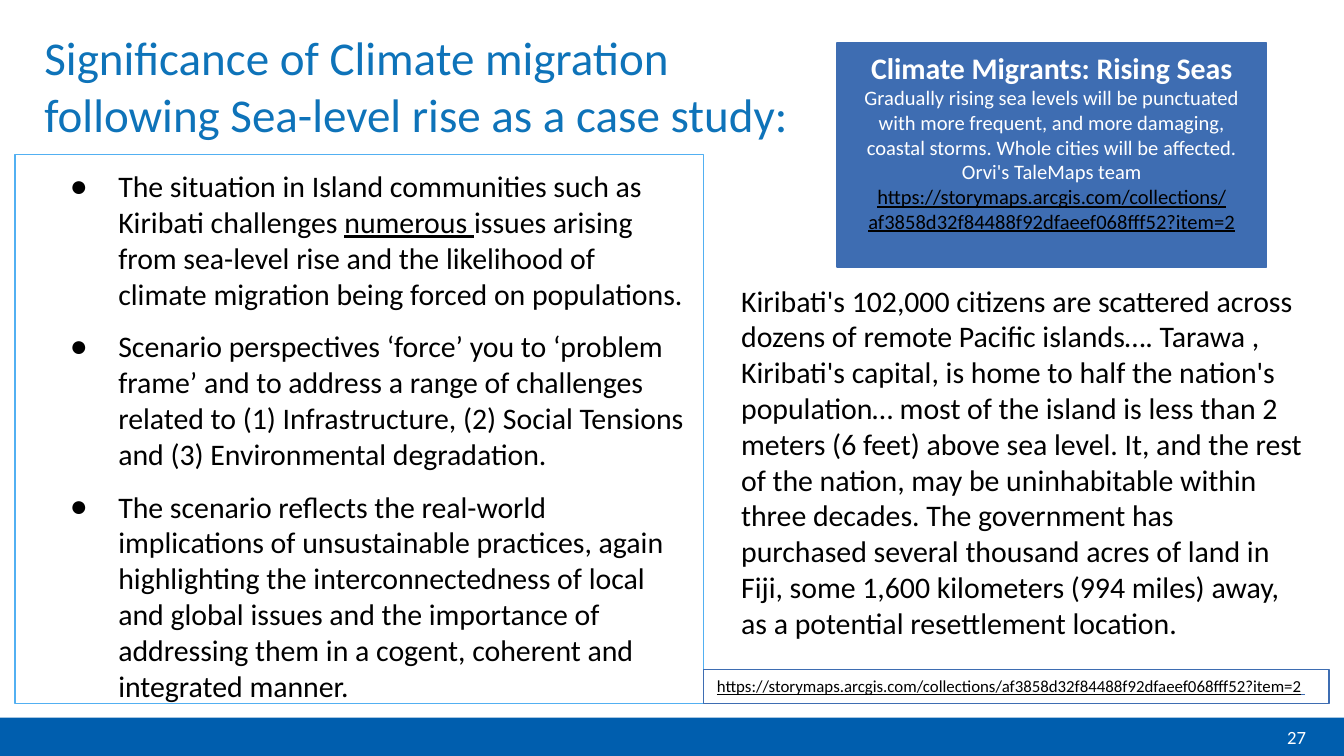
from dataclasses import dataclass

from lxml.etree import SubElement
from pptx import Presentation
from pptx.dml.color import RGBColor
from pptx.enum.shapes import MSO_SHAPE as Preset
from pptx.enum.text import MSO_ANCHOR as Anchor, MSO_AUTO_SIZE as AutoSize, PP_ALIGN as Align
from pptx.oxml.ns import qn
from pptx.util import Pt


@dataclass(frozen=True)
class Theme:
    font: str = "Calibri"
    title: str = "0E73B9"
    text: str = "000000"
    light: str = "FFFFFF"
    footer: str = "005EAE"
    panel: str = "3E6DB2"
    list_border: str = "52B0F2"
    title_size: float = 25.2
    body_size: float = 16
    detail_size: float = 11
    number_size: float = 10
    source_size: float = 9


THEME = Theme()
WIDTH, HEIGHT = 720, 405
STORY_URL = "https://storymaps.arcgis.com/collections/af3858d32f84488f92dfaeef068fff52?item=2"
UNDERLINED = {"underline": True}

# A paragraph is a list of runs; a run is (text, format that differs from the box).
TITLE = [[("Significance of Climate migration following Sea-level rise as a case study:", {})]]
POINTS = [
    [("The situation in Island communities such as Kiribati challenges ", {}),
     ("numerous ", UNDERLINED),
     ("issues arising from sea-level rise and the likelihood of climate migration "
      "being forced on populations.", {})],
    [("Scenario perspectives ‘force’ you to ‘problem frame’ and to address a range of challenges "
      "related to (1) Infrastructure, (2) Social Tensions and (3) Environmental degradation.", {})],
    [("The scenario reflects the real-world implications of unsustainable practices, again "
      "highlighting the interconnectedness of local and global issues and the importance of "
      "addressing them in a cogent, coherent and integrated manner.", {})],
]
CALLOUT = [
    [("Climate Migrants: Rising Seas", {"size": THEME.body_size, "bold": True})],
    [("Gradually rising sea levels will be punctuated with more frequent, and more damaging, "
      "coastal storms. Whole cities will be affected.", {})],
    [("Orvi's TaleMaps team", {})],
    [(STORY_URL, {"color": THEME.text, "underline": True})],
]
KIRIBATI = [[(
    "Kiribati's 102,000 citizens are scattered across dozens of remote Pacific islands…. Tarawa , "
    "Kiribati's capital, is home to half the nation's population… most of the island is less than "
    "2 meters (6 feet) above sea level. It, and the rest of the nation, may be uninhabitable within "
    "three decades. The government has purchased several thousand acres of land in Fiji, some "
    "1,600 kilometers (994 miles) away, as a potential resettlement location.", {})]]
SOURCE = [[(STORY_URL, UNDERLINED), (" ", {"color": THEME.panel, "underline": True})]]
NUMBER = [[("27", {})]]

# Left, top, width, height
TITLE_BOX = (8, 13, 429, 70)
LIST_BOX = (8, 82.8, 369, 294)
CALLOUT_BOX = (448.5, 23, 230, 120)
KIRIBATI_BOX = (390, 144, 316, 204)
SOURCE_BOX = (377, 358.6, 335, 18.2)
FOOTER_BOX = (0, 384.5, WIDTH, HEIGHT - 384.5)
NUMBER_BOX = (682.5, 387.4, 29.5, 17.3)


def place(shape, box):
    shape.left, shape.top, shape.width, shape.height = map(Pt, box)
    return shape


def set_outline(shape, color):
    shape.line.color.rgb = RGBColor.from_string(color)
    shape.line.width = Pt(0.75)


def add_rectangle(slide, box, fill=None, line=None):
    shape = slide.shapes.add_shape(Preset.RECTANGLE, *map(Pt, box))
    shape.shadow.inherit = False
    if fill:
        shape.fill.solid()
        shape.fill.fore_color.rgb = RGBColor.from_string(fill)
    else:
        shape.fill.background()
    if line:
        set_outline(shape, line)
    else:
        shape.line.fill.background()
    return shape


def add_text_box(slide, box):
    return slide.shapes.add_textbox(*map(Pt, box))


def write(shape, paragraphs, *, size, color=THEME.text, align=Align.LEFT, anchor=Anchor.TOP,
          margins=(7.2, 3.6), indent=(0, 0), after=0, bullet=None):
    """Fill a shape with paragraphs of runs; margins are (sides, top and bottom)."""
    frame = shape.text_frame
    frame.word_wrap = True
    frame.auto_size = AutoSize.NONE
    frame.vertical_anchor = anchor
    frame.margin_left = frame.margin_right = Pt(margins[0])
    frame.margin_top = frame.margin_bottom = Pt(margins[1])
    for index, runs in enumerate(paragraphs):
        paragraph = frame.add_paragraph() if index else frame.paragraphs[0]
        paragraph.alignment = align
        paragraph.space_before = Pt(0)
        paragraph.space_after = Pt(after)
        properties = paragraph._p.get_or_add_pPr()
        properties.set("marL", str(Pt(indent[0])))
        properties.set("indent", str(Pt(indent[1])))
        if bullet:
            SubElement(properties, qn("a:buChar"), char=bullet)
        for text, style in runs:
            run = paragraph.add_run()
            run.text = text
            font = run.font
            font.name = THEME.font
            font.size = Pt(style.get("size", size))
            font.bold = style.get("bold", False)
            font.underline = style.get("underline", False)
            font.color.rgb = RGBColor.from_string(style.get("color", color))


def main():
    presentation = Presentation()
    presentation.slide_width, presentation.slide_height = Pt(WIDTH), Pt(HEIGHT)
    slide = presentation.slides.add_slide(presentation.slide_layouts[1])
    wide = (7.2, 7.2)

    add_rectangle(slide, FOOTER_BOX, fill=THEME.footer)

    title = place(slide.shapes.title, TITLE_BOX)
    write(title, TITLE, size=THEME.title_size, color=THEME.title, anchor=Anchor.BOTTOM,
          margins=wide, indent=(8.6, 0), after=9)

    points = place(slide.placeholders[1], LIST_BOX)
    set_outline(points, THEME.list_border)
    write(points, POINTS, size=THEME.body_size, margins=wide, indent=(48.2, -26), after=9,
          bullet="●")

    callout = add_rectangle(slide, CALLOUT_BOX, fill=THEME.panel, line=THEME.panel)
    write(callout, CALLOUT, size=THEME.detail_size, color=THEME.light, align=Align.CENTER)

    write(add_text_box(slide, KIRIBATI_BOX), KIRIBATI, size=THEME.body_size, margins=wide)

    source = add_rectangle(slide, SOURCE_BOX, line=THEME.panel)
    write(source, SOURCE, size=THEME.source_size)

    write(add_text_box(slide, NUMBER_BOX), NUMBER, size=THEME.number_size, color=THEME.light,
          anchor=Anchor.BOTTOM)

    presentation.save("out.pptx")


if __name__ == "__main__":
    main()
